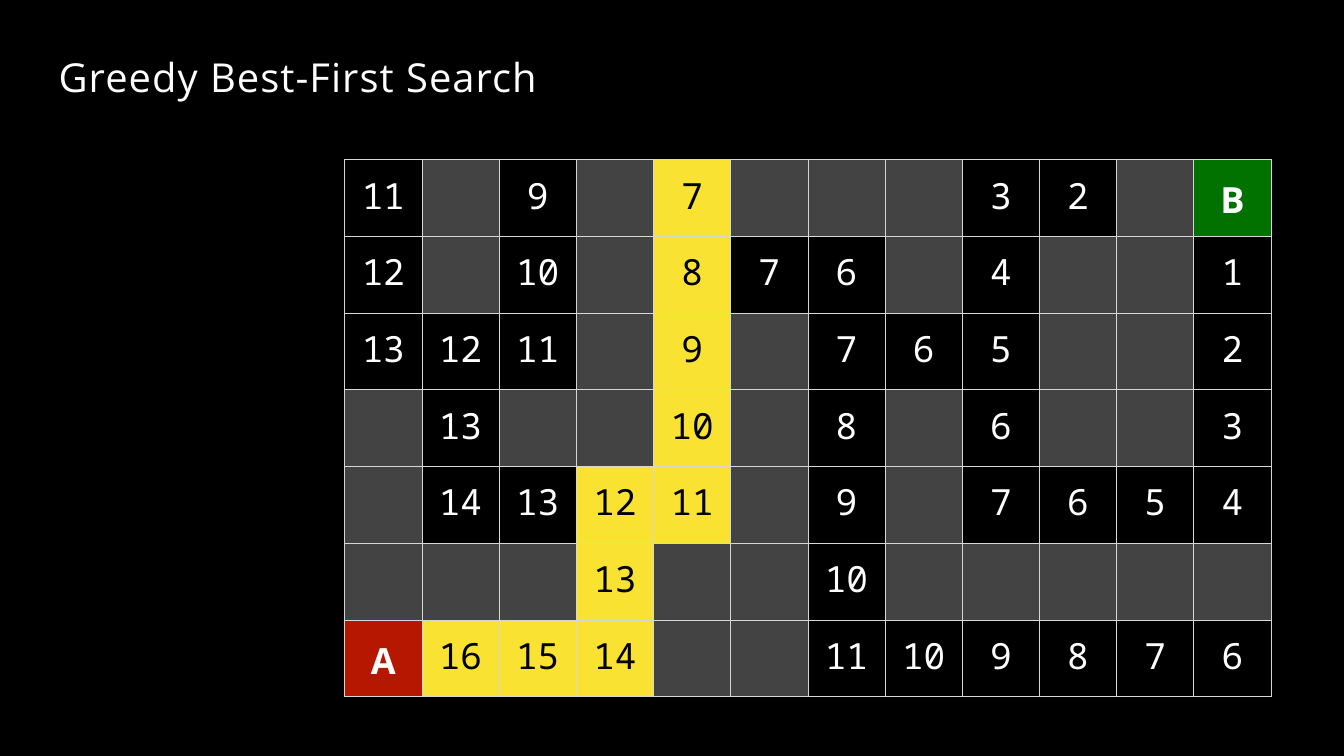
"""Build the Greedy Best-First Search maze slide."""
from lxml import etree
from pptx import Presentation
from pptx.dml.color import RGBColor
from pptx.enum import text
from pptx.oxml import ns
from pptx.util import Pt

TITLE = "Greedy Best-First Search"
WALL, PATH = "#", "*"
MAZE = [
    "11 # 9 # *7 # # # 3 2 # B",
    "12 # 10 # *8 7 6 # 4 # # 1",
    "13 12 11 # *9 # 7 6 5 # # 2",
    "# 13 # # *10 # 8 # 6 # # 3",
    "# 14 13 *12 *11 # 9 # 7 6 5 4",
    "# # # *13 # # 10 # # # # #",
    "A *16 *15 *14 # # 11 10 9 8 7 6",
]
BLACK, WHITE, GREY, YELLOW = "000000", "FFFFFF", "434343", "FAE232"
ENDS = {"A": "B51700", "B": "017100"}
END_SPACING = {"A": 2, "B": 3.5}
BORDER = "D6D7D6"
NO_STYLE = "{2D5ABB26-0587-4C30-8999-92F81FD0307C}"
SLIDE_SIZE = Pt(1583.28), Pt(890.64)
MAZE_LEFT, MAZE_TOP = Pt(406.08), Pt(187.92)
CELL_WIDTH, CELL_HEIGHT = Pt(90.96), Pt(90.41)


def paint(fill, color):
    fill.solid()
    fill.fore_color.rgb = RGBColor.from_string(color)


def style(paragraph, face, size, color, spacing, bold=False):
    font = paragraph.font
    font.name, font.size, font.bold = face, Pt(size), bold
    paint(font.fill, color)
    paragraph._p.pPr.get_or_add_defRPr().set("spc", str(round(spacing * 100)))


def add_borders(cell):
    properties = cell._tc.get_or_add_tcPr()
    for side in ("lnL", "lnR", "lnT", "lnB"):
        line = etree.SubElement(properties, ns.qn(f"a:{side}"), w=str(Pt(1)))
        solid = etree.SubElement(line, ns.qn("a:solidFill"))
        etree.SubElement(solid, ns.qn("a:srgbClr"), val=BORDER)


def fill_cell(cell, mark):
    on_path, is_end = mark.startswith(PATH), mark in ENDS
    add_borders(cell)
    if mark == WALL:
        paint(cell.fill, GREY)
        return
    paint(cell.fill, YELLOW if on_path else ENDS.get(mark, BLACK))
    cell.margin_left = cell.margin_right = cell.margin_bottom = 0
    cell.margin_top = Pt(18.4 if is_end else 13)
    cell.text = mark.lstrip(PATH)
    label = cell.text_frame.paragraphs[0]
    label.alignment = text.PP_ALIGN.CENTER
    style(label, "Open Sans" if is_end else "Noto Sans Mono", 42.5,
          BLACK if on_path else WHITE, END_SPACING.get(mark, -0.2), is_end)


def add_title(slide):
    title = slide.shapes.title
    title.left, title.top, title.width, title.height = map(Pt, (69.12, 61.92, 910.8, 58.32))
    frame = title.text_frame
    frame.text = TITLE
    frame.margin_left = frame.margin_right = frame.margin_top = frame.margin_bottom = 0
    frame.vertical_anchor = text.MSO_ANCHOR.TOP
    frame.auto_size = text.MSO_AUTO_SIZE.NONE
    heading = frame.paragraphs[0]
    heading.alignment = text.PP_ALIGN.LEFT
    style(heading, "Open Sans", 47, WHITE, 1.25)


def add_maze(slide):
    rows = [row.split() for row in MAZE]
    height, width = len(rows), len(rows[0])
    frame = slide.shapes.add_table(height, width, MAZE_LEFT, MAZE_TOP,
                                   CELL_WIDTH * width, CELL_HEIGHT * height)
    maze = frame.table
    maze.first_row = maze.horz_banding = False
    maze._tbl.tblPr.find(ns.qn("a:tableStyleId")).text = NO_STYLE
    for column in maze.columns:
        column.width = CELL_WIDTH
    for row, marks in zip(maze.rows, rows):
        row.height = CELL_HEIGHT
        for cell, mark in zip(row.cells, marks):
            fill_cell(cell, mark)


def main():
    deck = Presentation()
    deck.slide_width, deck.slide_height = SLIDE_SIZE
    slide = deck.slides.add_slide(deck.slide_layouts[5])
    paint(slide.background.fill, BLACK)
    add_title(slide)
    add_maze(slide)
    deck.save("out.pptx")


if __name__ == "__main__":
    main()
